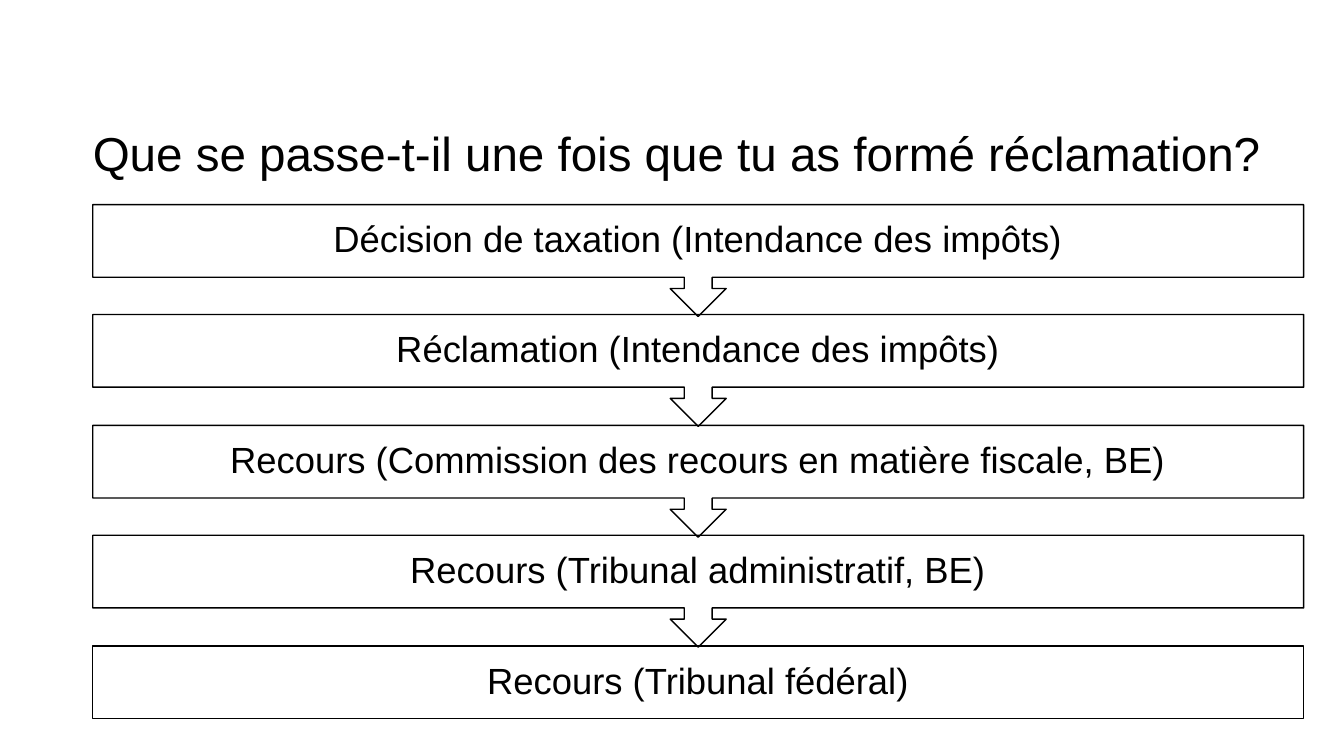
"""Build a slide showing the stages of appeal after a tax objection."""
from pptx import Presentation
from pptx.dml.color import RGBColor
from pptx.enum.shapes import MSO_SHAPE
from pptx.enum.text import MSO_ANCHOR, MSO_AUTO_SIZE, PP_ALIGN
from pptx.util import Emu, Pt

THEME = {
    "font": "Arial",
    "ink": RGBColor(0x00, 0x00, 0x00),
    "title_size": Pt(34),
    "stage_size": Pt(26),
    "outline": Pt(1),
}
SLIDE_WIDTH, SLIDE_HEIGHT = 1333, 750
LEFT, WIDTH = 92, 1201
TITLE_TOP, TITLE_HEIGHT = 117, 68
FIRST_TOP, LAST_TOP = 203, 641
BOX_HEIGHT, CALLOUT_HEIGHT = 72, 111
STAGE_INSET = 20

STAGES = [
    "Décision de taxation (Intendance des impôts)",
    "Réclamation (Intendance des impôts)",
    "Recours (Commission des recours en matière fiscale, BE)",
    "Recours (Tribunal administratif, BE)",
    "Recours (Tribunal fédéral)",
]


def px(length):
    return Emu(length * 9144)


def write(shape, text, size, align=PP_ALIGN.LEFT, inset=0, spacing=1.0):
    frame = shape.text_frame
    frame.text = text
    frame.word_wrap = True
    frame.auto_size = MSO_AUTO_SIZE.NONE
    frame.vertical_anchor = MSO_ANCHOR.MIDDLE
    frame.margin_left = frame.margin_right = px(inset)
    frame.margin_top = frame.margin_bottom = px(inset)
    paragraph = frame.paragraphs[0]
    paragraph.alignment = align
    paragraph.line_spacing = spacing
    paragraph.font.name = THEME["font"]
    paragraph.font.size = size
    paragraph.font.color.rgb = THEME["ink"]


presentation = Presentation()
presentation.slide_width = px(SLIDE_WIDTH)
presentation.slide_height = px(SLIDE_HEIGHT)
slide = presentation.slides.add_slide(presentation.slide_layouts[5])

question = slide.shapes.title
question.left, question.top = px(LEFT), px(TITLE_TOP)
question.width, question.height = px(WIDTH), px(TITLE_HEIGHT)
write(question, "Que se passe-t-il une fois que tu as formé réclamation?", THEME["title_size"])

last = len(STAGES) - 1
for index, stage_text in enumerate(STAGES):
    top = FIRST_TOP + (LAST_TOP - FIRST_TOP) * index // last
    if index < last:
        outline, height = MSO_SHAPE.DOWN_ARROW_CALLOUT, CALLOUT_HEIGHT
    else:
        outline, height = MSO_SHAPE.RECTANGLE, BOX_HEIGHT
    stage = slide.shapes.add_shape(outline, px(LEFT), px(top), px(WIDTH), px(height))
    stage.shadow.inherit = False
    stage.fill.background()
    stage.line.color.rgb = THEME["ink"]
    stage.line.width = THEME["outline"]
    write(stage, stage_text, THEME["stage_size"], align=PP_ALIGN.CENTER,
          inset=STAGE_INSET, spacing=0.9)

presentation.save("out.pptx")
